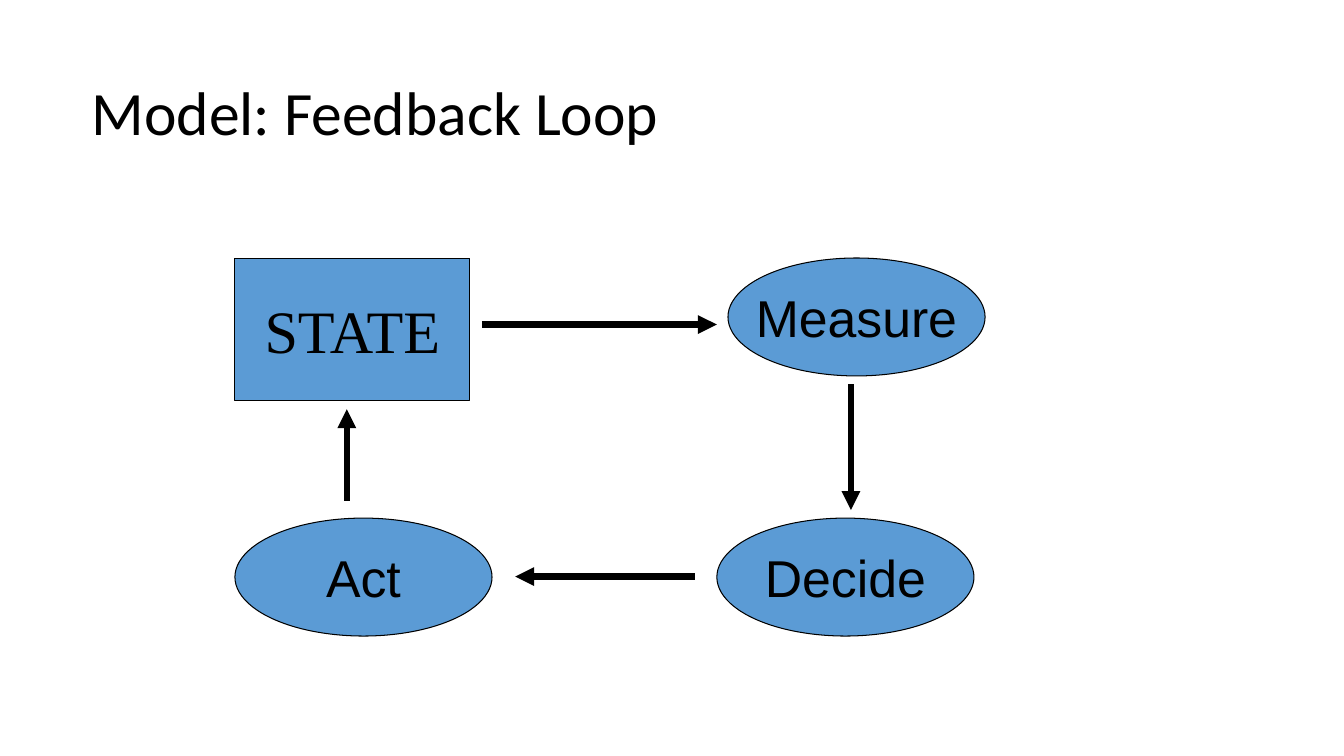
from pptx import Presentation
from pptx.dml.color import RGBColor
from pptx.enum.shapes import MSO_CONNECTOR, MSO_SHAPE
from pptx.enum.text import MSO_ANCHOR, PP_ALIGN
from pptx.oxml.ns import qn
from pptx.util import Inches, Pt
from lxml.etree import SubElement

BLACK = "000000"
BLUE = "5B9BD5"
LEFT, TOP, BOTTOM = 2.33, 2.56, 5.14
OVAL = (2.55, 1.17)

# label, shape, box, font, size
STEPS = [
    ("STATE", MSO_SHAPE.RECTANGLE, (LEFT, TOP, 2.33, 1.41), "Times New Roman", 43),
    ("Measure", MSO_SHAPE.OVAL, (7.22, TOP, *OVAL), "Arial", 37),
    ("Decide", MSO_SHAPE.OVAL, (7.11, BOTTOM, *OVAL), "Arial", 37),
    ("Act", MSO_SHAPE.OVAL, (LEFT, BOTTOM, *OVAL), "Arial", 37),
]

# start x, start y, end x, end y
ARROWS = [
    (4.78, 3.22, 7.11, 3.22),
    (8.44, 3.81, 8.44, 5.06),
    (6.89, 5.72, 5.11, 5.72),
    (3.44, 4.97, 3.44, 4.06),
]


def color(hex_text):
    return RGBColor.from_string(hex_text)


def write(shape, text, font, size, frame_format, para_format):
    """Set the only paragraph of a shape, with the margins shared by the slide."""
    frame = shape.text_frame
    margins = dict(margin_left=Inches(0.13), margin_right=Inches(0.13),
                   margin_top=Inches(0.07), margin_bottom=Inches(0.07))
    for name, value in {**margins, **frame_format}.items():
        setattr(frame, name, value)
    para = frame.paragraphs[0]
    for name, value in para_format.items():
        setattr(para, name, value)
    span = para.add_run()
    span.text = text
    for name, value in dict(name=font, size=Pt(size)).items():
        setattr(span.font, name, value)
    span.font.color.rgb = color(BLACK)


def add_title(page, text, box):
    title = page.shapes.add_textbox(*map(Inches, box))
    write(title, text, "Calibri", 44,
          dict(word_wrap=True, vertical_anchor=MSO_ANCHOR.TOP),
          dict(line_spacing=0.9))


def add_step(page, label, kind, box, font, size):
    step = page.shapes.add_shape(kind, *map(Inches, box))
    step.shadow.inherit = False
    step.fill.solid()
    step.fill.fore_color.rgb = color(BLUE)
    step.line.color.rgb = color(BLACK)
    step.line.width = Pt(0.75)
    write(step, label, font, size,
          dict(word_wrap=False, vertical_anchor=MSO_ANCHOR.MIDDLE),
          dict(alignment=PP_ALIGN.CENTER))


def add_arrow(page, ends):
    arrow = page.shapes.add_connector(MSO_CONNECTOR.STRAIGHT, *map(Inches, ends))
    arrow.line.color.rgb = color(BLACK)
    arrow.line.width = Pt(4.5)
    SubElement(arrow.line._get_or_add_ln(), qn("a:tailEnd"), type="triangle")
    SubElement(arrow._element.spPr, qn("a:effectLst"))


def add_feedback_loop(page):
    for step in STEPS:
        add_step(page, *step)
    for ends in ARROWS:
        add_arrow(page, ends)


def main():
    deck = Presentation()
    deck.slide_width, deck.slide_height = Inches(13.33), Inches(7.5)
    page = deck.slides.add_slide(deck.slide_layouts[6])
    add_title(page, "Model: Feedback Loop", (0.78, 0.75, 11.77, 1.58))
    add_feedback_loop(page)
    deck.save("out.pptx")


if __name__ == "__main__":
    main()
